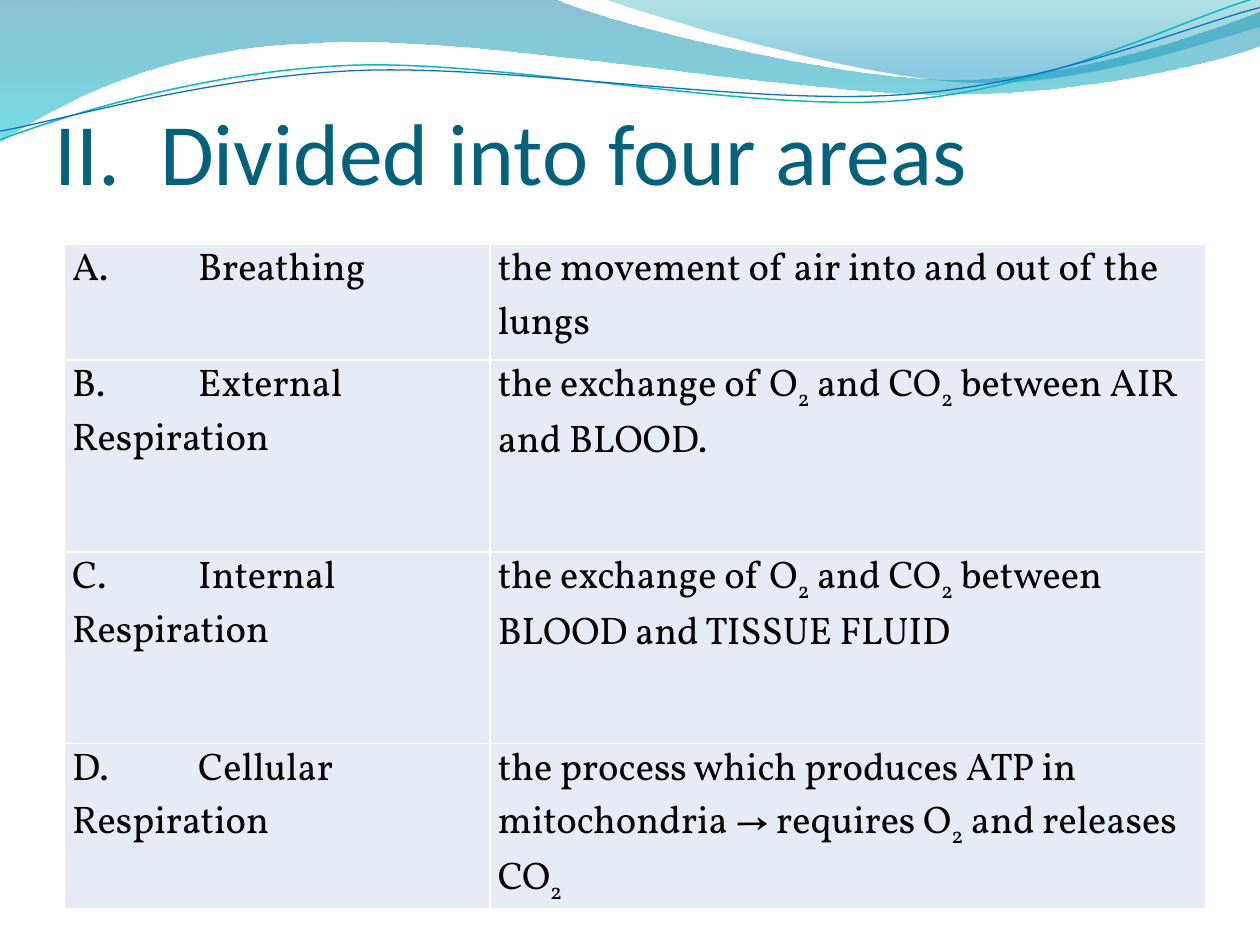
from pptx import Presentation, util as u
from pptx.dml.color import RGBColor
from pptx.enum import text
from pptx.oxml import ns
from lxml import etree

Pt = u.Pt
HUES = {"title": "04617B", "ink": "000000", "cell": "E7EBF5", "rule": "FFFFFF",
        "teal": "0AB8BF", "blue": "0F6FC6"}

# Outlines in points: a pair is a line end, a six is a Bezier curve.
# Bands add gradient stops: position, colour, opacity in percent.
BANDS = [
    ([(0, 0), (316.8, -0.7), (342.7, 12.2, 478.1, 45.4, 545.8, 45.4),
      (614.2, 45.4, 689.8, 18.7, 720, 6.5), (720.7, 25.9),
      (707.8, 31.7, 626.4, 54.7, 537.1, 54), (447.8, 54, 275, 20.2, 185, 24.5),
      (92.2, 25.9, 33.1, 59.8, -0.7, 81.4), (0, 0)],
     [(0, "0074A1", 45), (1, "00C6CF", 55)]),
    ([(344.9, -0.7), (366.5, 7.9, 491, 44.6, 553.7, 46.8),
      (616.3, 49.7, 691.9, 23, 720, 15.1), (720, 0), (344.9, -0.7)],
     [(0, "00A1A9", 30), (0.8, "008BBF", 45)]),
]
LINES = [
    ([(0, 79.9), (34.6, 67, 113.8, 41, 199.4, 37.4),
      (284.4, 33.8, 427, 64.1, 513.4, 57.6),
      (599.8, 51.1, 675.4, 10.8, 718.6, -1.4)], "teal", 0.85),
    ([(0, 74.9), (33.8, 69.1, 118.1, 43.9, 203.8, 40.3),
      (290.2, 36.7, 429.8, 60.5, 516.2, 54),
      (601.9, 48.2, 677.5, 15.1, 720, 4.3)], "blue", 0.75),
]

# An underscore marks the next letter as a subscript.
ROWS = [
    ("A.\tBreathing", "the movement of air into and out of the lungs", 66.24),
    ("B.\tExternal \tRespiration",
     "the exchange of O_2 and CO_2 between AIR and BLOOD.", 109.6),
    ("C.\tInternal \tRespiration",
     "the exchange of O_2 and CO_2 between BLOOD and TISSUE FLUID", 109.6),
    ("D.\tCellular \tRespiration",
     "the process which produces ATP in mitochondria → requires O_2"
     " and releases CO_2", 94.3),
]


def rgb(name):
    return RGBColor.from_string(HUES.get(name, name))


def outline(slide, box, steps, close):
    pts = [(round(s[i] * 100), round(s[i + 1] * 100))
           for s in steps for i in range(0, len(s), 2)]
    pen = slide.shapes.build_freeform(*pts[0], scale=Pt(1) / 100)
    pen.add_line_segments(pts[1:], close=close)
    shape = pen.convert_to_shape(Pt(box[0]), Pt(box[1]))
    shape.shadow.inherit = False
    # Join each three segments of a curve into one Bezier
    ends = iter(list(shape._element.iter(ns.qn("a:lnTo"))))
    for step in steps[1:]:
        curve = next(ends)
        if len(step) == 6:
            curve.tag = ns.qn("a:cubicBezTo")
            for end in (next(ends), next(ends)):
                curve.append(end[0])
                end.getparent().remove(end)
    return shape


def waves(slide, box):
    # Translucent bands
    for steps, stops in BANDS:
        band = outline(slide, box, steps, True)
        band.line.fill.background()
        band.fill.gradient()
        band.fill.gradient_angle = 270
        for stop, (pos, hue, _) in zip(band.fill.gradient_stops, stops):
            stop.position = pos
            stop.color.rgb = rgb(hue)
        tones = band._element.spPr.iter(ns.qn("a:srgbClr"))
        for tone, (_, _, pct) in zip(tones, stops):
            etree.SubElement(tone, ns.qn("a:alpha"), val=str(pct * 1000))
    # Thin lines
    for steps, hue, width in LINES:
        curve = outline(slide, box, steps, False)
        curve.fill.background()
        curve.line.color.rgb = rgb(hue)
        curve.line.width = Pt(width)


def style(par, font, size, hue):
    for run in par.runs:
        run.font.name = font
        run.font.size = Pt(size)
        run.font.color.rgb = rgb(hue)


def title(slide, box, words):
    frame = slide.shapes.add_textbox(*map(Pt, box)).text_frame
    frame.word_wrap = True
    frame.vertical_anchor = text.MSO_ANCHOR.BOTTOM
    frame.margin_left = frame.margin_right = frame.margin_bottom = 0
    frame.margin_top = Pt(3.6)
    frame.text = words
    style(frame.paragraphs[0], "Calibri", 50, "title")


def border(cell):
    props = cell._tc.get_or_add_tcPr()
    for i, side in enumerate(("lnL", "lnR", "lnT", "lnB")):
        line = etree.Element(ns.qn("a:" + side), w=str(Pt(1)))
        fill = etree.SubElement(line, ns.qn("a:solidFill"))
        etree.SubElement(fill, ns.qn("a:srgbClr"), val=HUES["rule"])
        props.insert(i, line)


def write(cell, words):
    cell.margin_left = cell.margin_right = Pt(4.5)
    cell.margin_top = cell.margin_bottom = 0
    par = cell.text_frame.paragraphs[0]
    if "\t" in words:
        tabs = etree.SubElement(par._p.get_or_add_pPr(), ns.qn("a:tabLst"))
        etree.SubElement(tabs, ns.qn("a:tab"), pos=str(Pt(72)), algn="l")
    first, *rest = words.split("_")
    par.add_run().text = first
    for part in rest:
        sub = par.add_run()
        sub.text = part[0]
        sub._r.get_or_add_rPr().set("baseline", "-25000")
        if part[1:]:
            par.add_run().text = part[1:]
    style(par, "Vollkorn", 22, "ink")


def areas(slide, box):
    table = slide.shapes.add_table(len(ROWS), 2, *map(Pt, box)).table
    table.first_row = table.horz_banding = False
    split = 243.2
    for col, width in zip(table.columns, (split, box[2] - split)):
        col.width = Pt(width)
    for r, (*cells, height) in enumerate(ROWS):
        table.rows[r].height = Pt(height)
        for c, words in enumerate(cells):
            cell = table.cell(r, c)
            write(cell, words)
            cell.fill.solid()
            cell.fill.fore_color.rgb = rgb("cell")
            border(cell)


def main():
    deck = Presentation()
    deck.slide_width, deck.slide_height = Pt(720), Pt(540)
    slide = deck.slides.add_slide(deck.slide_layouts[6])
    waves(slide, (0, 0, 720, 82))
    title(slide, (31.2, 26, 648, 90), "II.  Divided into four areas")
    areas(slide, (36.8, 139.6, 652.3, 379.7))
    deck.save("out.pptx")


if __name__ == "__main__":
    main()
